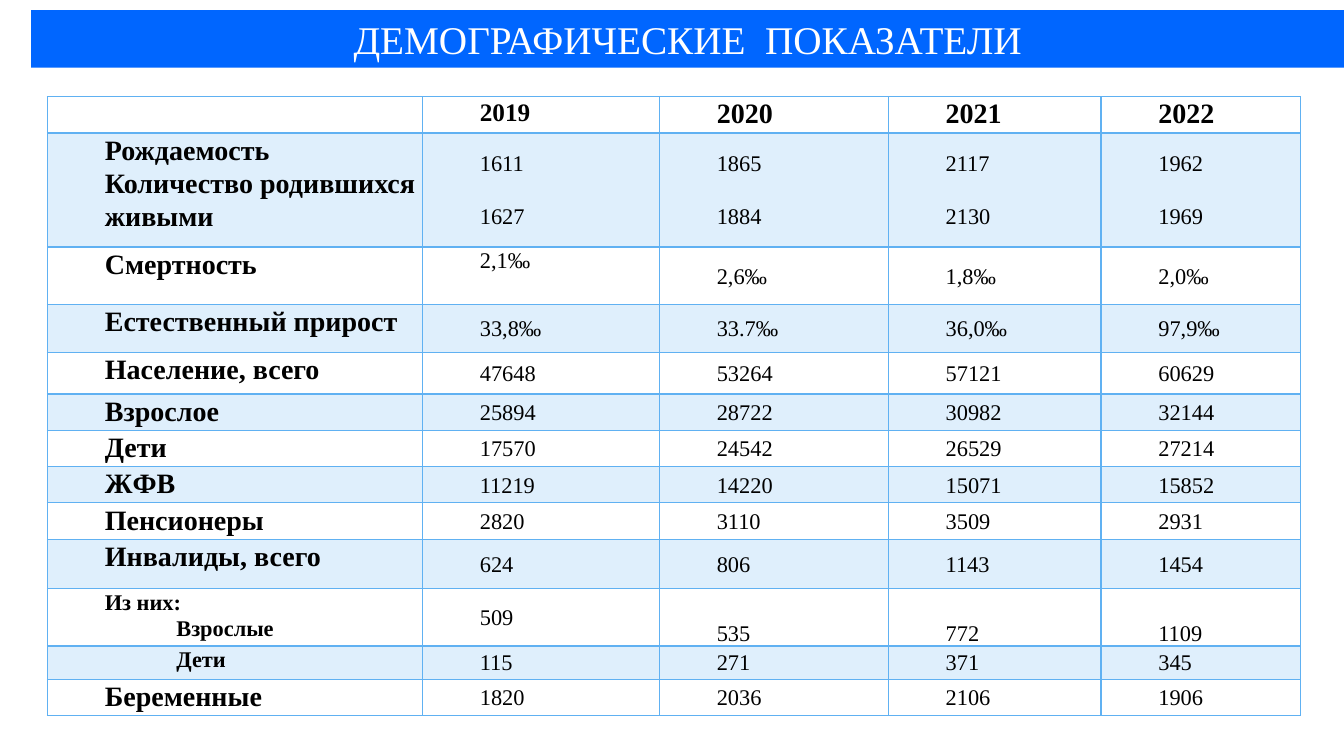
from lxml.etree import SubElement
from pptx import Presentation
from pptx.dml.color import RGBColor
from pptx.enum.text import MSO_ANCHOR as ANCHOR, PP_ALIGN as ALIGN
from pptx.oxml.ns import qn
from pptx.util import Inches, Pt

BAR_BLUE = RGBColor(0x00, 0x66, 0xFF)
TABLE_BLUE = RGBColor(0x60, 0xB1, 0xF2)
WHITE = RGBColor(0xFF, 0xFF, 0xFF)
BLACK = RGBColor(0x00, 0x00, 0x00)
FONT = "Times New Roman"
INDENT, SUB_INDENT = 0.5, 1.21
LABEL = dict(size=Pt(20), bold=True)
SUB_LABEL = dict(size=Pt(16), bold=True)
VALUE = dict(size=Pt(16), bold=False)

COLUMNS = [3.72, 2.35, 2.27, 2.11, 1.98]
YEARS = ["2019", "2020", "2021", "2022"]
# Row height, label, values by year
ROWS = [
    (1.13, "Рождаемость\nКоличество родившихся живыми",
     ["1611\n1627", "1865\n1884", "2117\n2130", "1962\n1969"]),
    (0.57, "Смертность", ["2,1‰", "2,6‰", "1,8‰", "2,0‰"]),
    (0.48, "Естественный прирост", ["33,8‰", "33.7‰", "36,0‰", "97,9‰"]),
    (0.41, "Население, всего", ["47648", "53264", "57121", "60629"]),
    (0.36, "Взрослое", ["25894", "28722", "30982", "32144"]),
    (0.36, "Дети", ["17570", "24542", "26529", "27214"]),
    (0.36, "ЖФВ", ["11219", "14220", "15071", "15852"]),
    (0.36, "Пенсионеры", ["2820", "3110", "3509", "2931"]),
    (0.49, "Инвалиды, всего", ["624", "806", "1143", "1454"]),
    (0.57, "Из них:\nВзрослые", ["509", "535", "772", "1109"]),
    (0.33, "Дети", ["115", "271", "371", "345"]),
    (0.36, "Беременные", ["1820", "2036", "2106", "1906"]),
]
HEADER_HEIGHT = 0.36
DEATHS, DISABLED_ADULTS, DISABLED_CHILDREN = 2, 10, 11


def set_font(font, **formats):
    for name, value in dict(name=FONT, **formats).items():
        setattr(font, name, value)


def add_title(s, text):
    title = s.shapes.title
    box = dict(left=0.31, top=0.1, width=13.02, height=0.57)
    for name, value in box.items():
        setattr(title, name, Inches(value))
    title.fill.solid()
    title.fill.fore_color.rgb = BAR_BLUE
    tf = title.text_frame
    tf.vertical_anchor = ANCHOR.MIDDLE
    p = tf.paragraphs[0]
    p.alignment = ALIGN.CENTER
    r = p.add_run()
    r.text = text
    set_font(r.font, size=Pt(28))
    r.font.color.rgb = WHITE


def write_cell(cell, text, formats, anchor=ANCHOR.TOP, indents=(INDENT,), gap=0):
    """Write one paragraph a line; the last indent serves all later lines."""
    cell.vertical_anchor = anchor
    tf = cell.text_frame
    for i, line in enumerate(text.split("\n")):
        p = tf.add_paragraph() if i else tf.paragraphs[0]
        p.line_spacing = 1.07
        if i and gap:
            p.space_before = Pt(gap)
        indent = indents[min(i, len(indents) - 1)]
        p._p.get_or_add_pPr().set("marL", str(Inches(indent)))
        r = p.add_run()
        r.text = line
        set_font(r.font, **formats)
        r.font.color.rgb = BLACK


def style_cell(cell, row):
    """Set margins, borders and the pale band of every other row."""
    margins = dict(margin_left=0.07, margin_right=0.07, margin_top=0, margin_bottom=0)
    for name, value in margins.items():
        setattr(cell, name, Inches(value))
    widths = dict(lnL=1, lnR=1, lnT=2 if row == 1 else 1, lnB=2 if row == 0 else 1)
    tcPr = cell._tc.get_or_add_tcPr()
    for side, width in widths.items():
        ln = SubElement(tcPr, qn(f"a:{side}"), w=str(Pt(width)))
        SubElement(SubElement(ln, qn("a:solidFill")), qn("a:srgbClr"), val=str(TABLE_BLUE))
    if row % 2:
        cell.fill.solid()
        cell.fill.fore_color.rgb = TABLE_BLUE
        SubElement(tcPr.find(qn("a:solidFill"))[0], qn("a:alpha"), val="20000")
    else:
        cell.fill.background()


def value_anchor(row, column):
    if row == DEATHS and column == 1:
        return ANCHOR.TOP
    if row == DISABLED_ADULTS and column > 1:
        return ANCHOR.BOTTOM
    return ANCHOR.MIDDLE


def add_indicators(s):
    heights = [HEADER_HEIGHT] + [height for height, _, _ in ROWS]
    frame = s.shapes.add_table(len(heights), len(COLUMNS), Inches(0.47), Inches(0.96),
                               Inches(sum(COLUMNS)), Inches(sum(heights)))
    table = frame.table
    table.first_row = table.horz_banding = False
    for column, width in zip(table.columns, COLUMNS):
        column.width = Inches(width)
    for i, height in enumerate(heights):
        table.rows[i].height = Inches(height)
        for j in range(len(COLUMNS)):
            style_cell(table.cell(i, j), i)

    for j, year in enumerate(YEARS, 1):
        write_cell(table.cell(0, j), year, dict(size=Pt(18 if j == 1 else 20), bold=True))
    label_indents = {DISABLED_ADULTS: (INDENT, SUB_INDENT), DISABLED_CHILDREN: (SUB_INDENT,)}
    for i, (_, label, values) in enumerate(ROWS, 1):
        formats = SUB_LABEL if i in label_indents else LABEL
        write_cell(table.cell(i, 0), label, formats, indents=label_indents.get(i, (INDENT,)))
        for j, value in enumerate(values, 1):
            write_cell(table.cell(i, j), value, VALUE, value_anchor(i, j), gap=19)


def main():
    prs = Presentation()
    prs.slide_width, prs.slide_height = Inches(13.33), Inches(7.5)
    s = prs.slides.add_slide(prs.slide_layouts[5])
    add_title(s, "ДЕМОГРАФИЧЕСКИЕ  ПОКАЗАТЕЛИ")
    add_indicators(s)
    prs.save("out.pptx")


if __name__ == "__main__":
    main()
